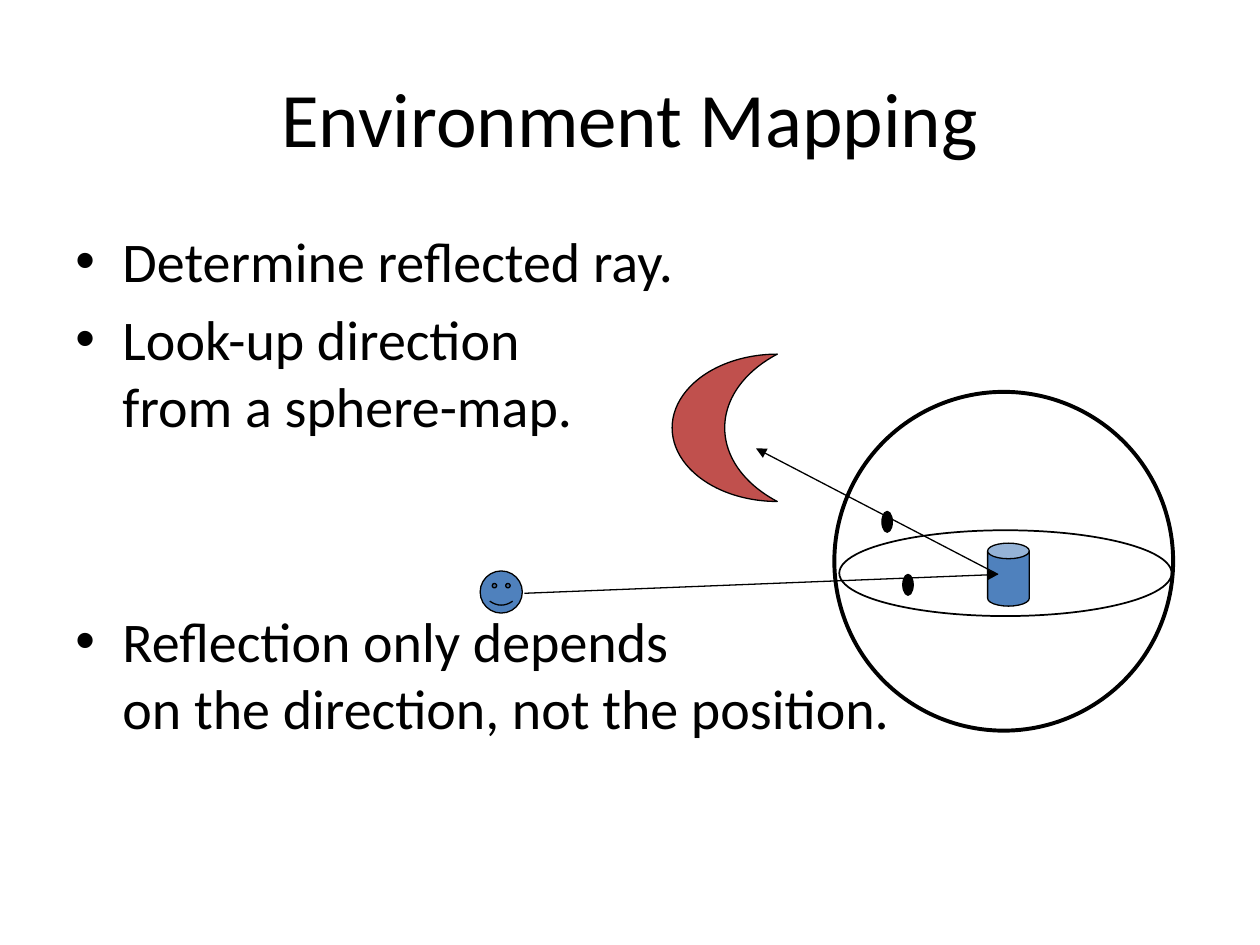
from dataclasses import dataclass

import pptx
import pptx.dml.color
import pptx.enum.shapes
import pptx.enum.text
import pptx.oxml
import pptx.oxml.ns
import pptx.util

Cm, Pt = pptx.util.Cm, pptx.util.Pt
RGB = pptx.dml.color.RGBColor
SHAPE = pptx.enum.shapes.MSO_SHAPE
ALIGN = pptx.enum.text.PP_ALIGN
ANCHOR = pptx.enum.text.MSO_ANCHOR


@dataclass(frozen=True)
class Theme:
    font: str = "Calibri"
    title_size: float = 44
    body_size: float = 32
    ink: RGB = RGB(0x00, 0x00, 0x00)
    blue: RGB = RGB(0x4F, 0x81, 0xBD)
    red: RGB = RGB(0xC0, 0x50, 0x4D)
    thin: float = 0.75
    medium: float = 1
    thick: float = 2.25


THEME = Theme()
BULLET_INDENT = Cm(0.95)
POINTS = [  # text, space before in points
    ("Determine reflected ray.", 6),
    ("Look-up direction \vfrom a sphere-map.", 6),
    ("Reflection only depends\von the direction, not the position.", 95.5),
]


def set_format(target, values):
    for name, value in values.items():
        setattr(target, name, value)


def drawing_element(tag, attributes=""):
    namespace = pptx.oxml.ns.nsdecls("a")
    return pptx.oxml.parse_xml(f"<a:{tag} {namespace} {attributes}/>")


def add_text_frame(slide, box, anchor):
    frame = slide.shapes.add_textbox(*map(Cm, box)).text_frame
    set_format(frame, {"word_wrap": True, "vertical_anchor": anchor})
    return frame


def write(paragraph, text, size, **layout):
    paragraph.text = text
    set_format(paragraph, layout)
    for run in paragraph.runs:
        set_format(run.font, {"name": THEME.font, "size": Pt(size)})
        run.font.color.rgb = THEME.ink


def add_bullet(paragraph):
    properties = paragraph._p.get_or_add_pPr()
    properties.set("marL", str(BULLET_INDENT))
    properties.set("indent", str(-BULLET_INDENT))
    properties.append(drawing_element("buFont", 'typeface="Arial"'))
    properties.append(drawing_element("buChar", 'char="•"'))


def add_figure(slide, kind, box, fill=None, weight=THEME.thin):
    """Add an outlined preset shape; without a fill it stays see-through."""
    figure = slide.shapes.add_shape(kind, *map(Cm, box))
    figure.shadow.inherit = False
    if fill is None:
        figure.fill.background()
    else:
        figure.fill.solid()
        figure.fill.fore_color.rgb = fill
    figure.line.color.rgb = THEME.ink
    figure.line.width = Pt(weight)
    return figure


def add_ray(slide, start, end):
    ray = slide.shapes.add_connector(
        pptx.enum.shapes.MSO_CONNECTOR.STRAIGHT, *map(Cm, start + end))
    ray.line.color.rgb = THEME.ink
    ray.line.width = Pt(THEME.thin)
    ray.line._get_or_add_ln().append(drawing_element("tailEnd", 'type="triangle"'))
    ray._element.spPr.append(drawing_element("effectLst"))


def add_crossing(slide, left, top):
    """Mark where a ray meets the sphere map."""
    add_figure(slide, SHAPE.OVAL, (left, top, 0.21, 0.42), THEME.ink)


def add_title(slide):
    frame = add_text_frame(slide, (1.27, 0.76, 22.86, 3.18), ANCHOR.MIDDLE)
    write(frame.paragraphs[0], "Environment Mapping", THEME.title_size,
          alignment=ALIGN.CENTER)


def add_points(slide):
    frame = add_text_frame(slide, (1.27, 4.45, 22.86, 12.57), ANCHOR.TOP)
    for index, (text, gap) in enumerate(POINTS):
        paragraph = frame.add_paragraph() if index else frame.paragraphs[0]
        write(paragraph, text, THEME.body_size,
              alignment=ALIGN.LEFT, space_before=Pt(gap))
        add_bullet(paragraph)


def add_diagram(slide):
    hit = (20.12, 11.58)
    reflector = add_figure(slide, SHAPE.CAN, (19.91, 10.95, 0.84, 1.27), THEME.blue)
    reflector.adjustments[0] = 0.375
    add_ray(slide, hit, (15.24, 9.04))
    add_figure(slide, SHAPE.MOON, (13.55, 7.14, 2.12, 2.97), THEME.red)
    add_crossing(slide, 17.78, 10.31)
    add_figure(slide, SHAPE.SMILEY_FACE, (9.68, 11.51, 0.85, 0.85), THEME.blue)
    add_ray(slide, (10.57, 11.96), hit)
    add_crossing(slide, 18.2, 11.58)
    add_figure(slide, SHAPE.OVAL, (16.82, 7.9, 6.83, 6.83), weight=THEME.thick)
    add_figure(slide, SHAPE.OVAL, (16.92, 10.69, 6.7, 1.73), weight=THEME.medium)


def main():
    deck = pptx.Presentation()
    set_format(deck, {"slide_width": Cm(25.4), "slide_height": Cm(19.05)})
    slide = deck.slides.add_slide(deck.slide_layouts[6])
    add_title(slide)
    add_points(slide)
    add_diagram(slide)
    deck.save("out.pptx")


if __name__ == "__main__":
    main()
